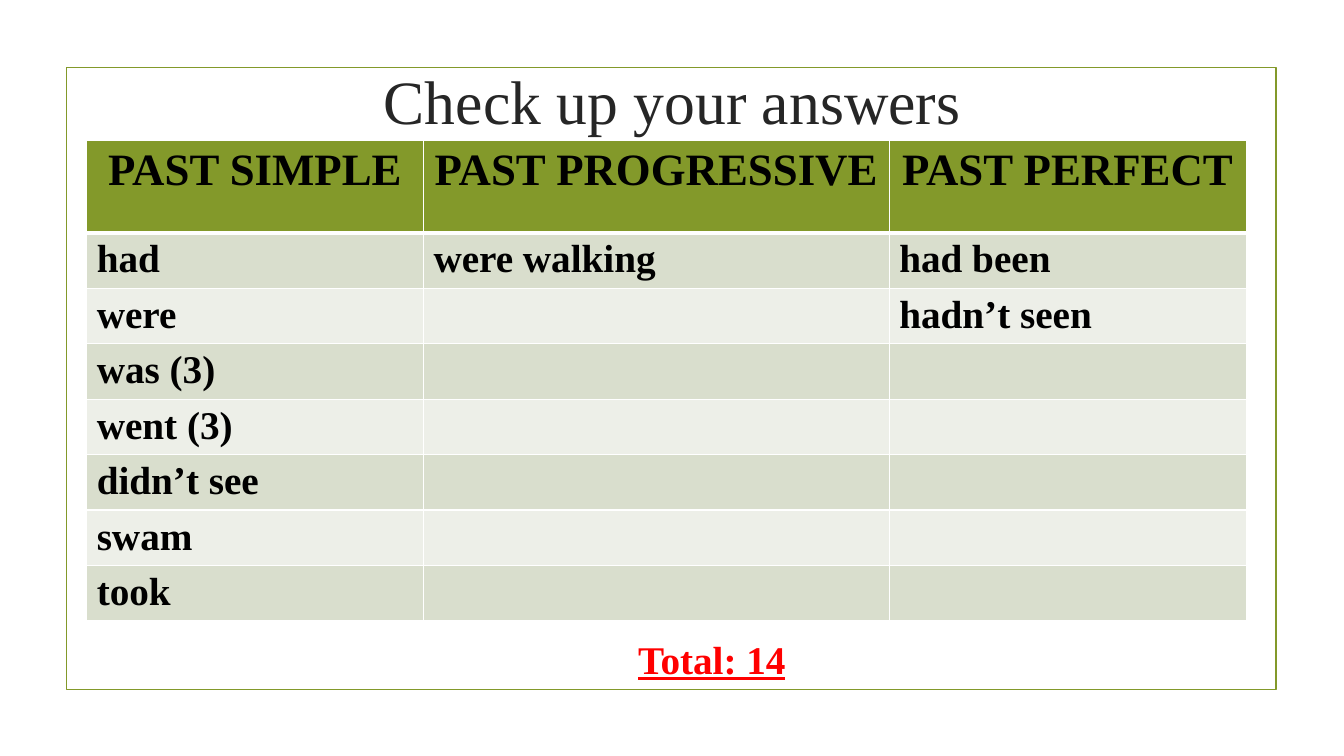
from lxml import etree
from pptx import Presentation
from pptx import util as u
from pptx.dml import color
from pptx.enum import shapes, text
from pptx.oxml import ns

FACE = "Times New Roman"
OLIVE, WHITE, BLACK = "83992A", "FFFFFF", "000000"
BANDS = ["D9DECD", "EDEFE8"]
TITLE = {"name": FACE, "size": u.Pt(44), "bold": False}
HEADING = {"name": FACE, "size": u.Pt(32), "bold": True}
ANSWER = {"name": FACE, "size": u.Pt(28), "bold": True}
TOTAL = {**ANSWER, "underline": True}

COLUMN_WIDTHS = [3.34, 4.62, 3.54]
HEADING_HEIGHT, ANSWER_HEIGHT = 0.92, 0.55
TENSES = {
    "PAST SIMPLE": ["had", "were", "was (3)", "went (3)", "didn’t see", "swam", "took"],
    "PAST PROGRESSIVE": ["were walking"],
    "PAST PERFECT": ["had been", "hadn’t seen"],
}


def rgb(hex_color):
    return color.RGBColor.from_string(hex_color)


def write(frame, words, values, hex_color, align):
    paragraph = frame.paragraphs[0]
    paragraph.text = words
    paragraph.alignment = align
    for name, value in values.items():
        setattr(paragraph.font, name, value)
    paragraph.font.color.rgb = rgb(hex_color)


def style_cell(cell, fill, top, bottom):
    properties = cell._tc.get_or_add_tcPr()
    for side, points in {"L": 1, "R": 1, "T": top, "B": bottom}.items():
        border = etree.SubElement(properties, ns.qn(f"a:ln{side}"), w=str(u.Pt(points)))
        solid = etree.SubElement(border, ns.qn("a:solidFill"))
        etree.SubElement(solid, ns.qn("a:srgbClr"), val=WHITE)
    cell.fill.solid()
    cell.fill.fore_color.rgb = rgb(fill)


def add_frame(slide, left, top, width, height):
    frame = slide.shapes.add_shape(
        shapes.MSO_SHAPE.RECTANGLE,
        u.Inches(left), u.Inches(top), u.Inches(width), u.Inches(height))
    frame.shadow.inherit = False
    frame.fill.background()
    frame.line.color.rgb = rgb(OLIVE)
    frame.line.width = u.Pt(1.25)


def place_title(slide, left, top, width, height):
    title = slide.shapes.title
    box = {"left": left, "top": top, "width": width, "height": height}
    for name, value in box.items():
        setattr(title, name, u.Inches(value))
    title.text_frame.vertical_anchor = text.MSO_ANCHOR.MIDDLE
    write(title.text_frame, "Check up your answers", TITLE, "262626", text.PP_ALIGN.CENTER)


def add_answers(slide, left, top):
    row_count = 1 + max(len(answers) for answers in TENSES.values())
    height = HEADING_HEIGHT + ANSWER_HEIGHT * (row_count - 1)
    table = slide.shapes.add_table(
        row_count, len(TENSES), u.Inches(left), u.Inches(top),
        u.Inches(sum(COLUMN_WIDTHS)), u.Inches(height)).table
    for index, row in enumerate(table.rows):
        row.height = u.Inches(ANSWER_HEIGHT if index else HEADING_HEIGHT)
    for column, (tense, answers) in enumerate(TENSES.items()):
        table.columns[column].width = u.Inches(COLUMN_WIDTHS[column])
        heading = table.cell(0, column)
        style_cell(heading, OLIVE, 1, 3)
        write(heading.text_frame, tense, HEADING, BLACK, text.PP_ALIGN.CENTER)
        for row in range(1, row_count):
            cell = table.cell(row, column)
            style_cell(cell, BANDS[(row - 1) % 2], 3 if row == 1 else 1, 1)
            if row <= len(answers):
                write(cell.text_frame, answers[row - 1], ANSWER, BLACK, text.PP_ALIGN.LEFT)


def add_total(slide, left, top, width, height):
    total = slide.shapes.add_textbox(
        u.Inches(left), u.Inches(top), u.Inches(width), u.Inches(height))
    total.text_frame.word_wrap = True
    write(total.text_frame, "Total: 14", TOTAL, "FF0000", text.PP_ALIGN.LEFT)


def main():
    deck = Presentation()
    deck.slide_width, deck.slide_height = u.Inches(13.33), u.Inches(7.5)
    slide = deck.slides.add_slide(deck.slide_layouts[5])
    add_frame(slide, 0.66, 0.67, 12, 6.17)
    place_title(slide, 0.92, 0.4, 11.5, 1.19)
    add_answers(slide, 0.86, 1.39)
    add_total(slide, 6.23, 6.25, 5.33, 0.57)
    deck.save("out.pptx")


if __name__ == "__main__":
    main()
